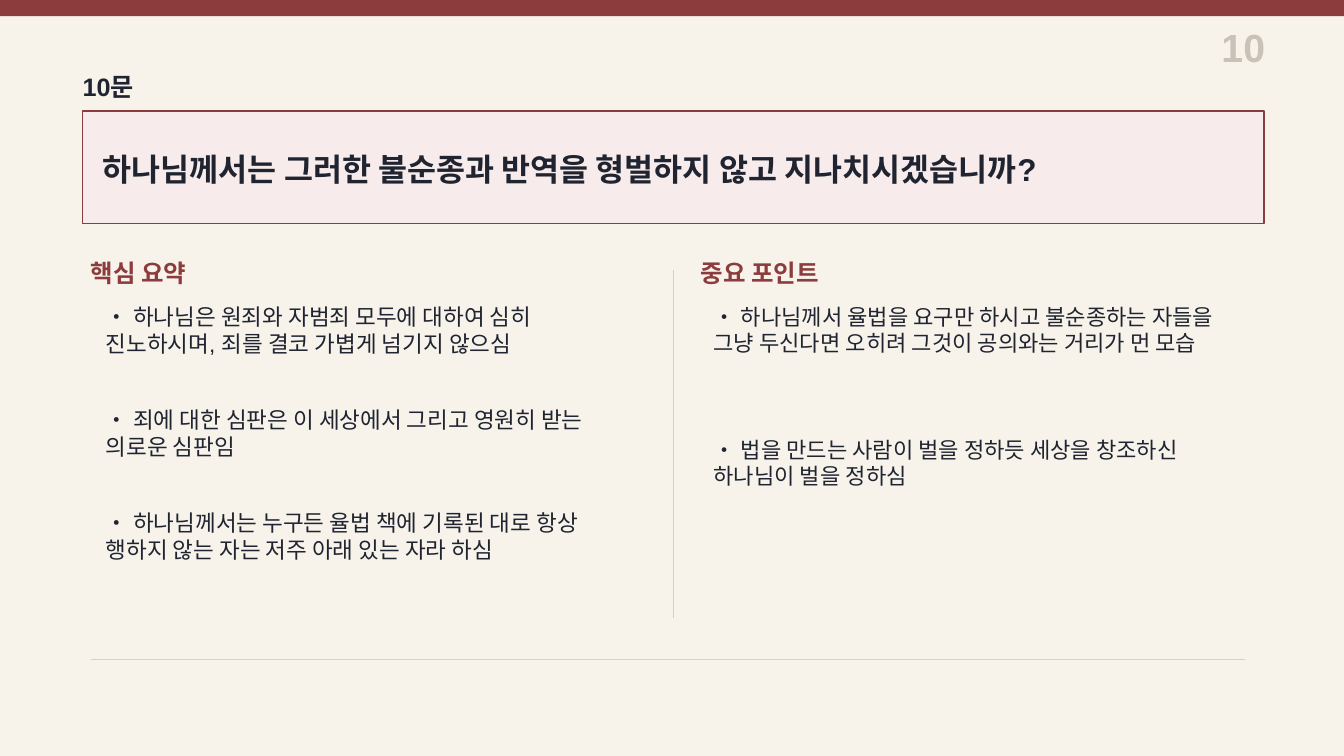
from pptx import Presentation
from pptx.dml.color import RGBColor
from pptx.enum.shapes import MSO_CONNECTOR, MSO_SHAPE
from pptx.enum.text import MSO_ANCHOR, PP_ALIGN
from pptx.oxml.ns import qn
from pptx.util import Pt
from lxml import etree

RECTANGLE = MSO_SHAPE.RECTANGLE
STRAIGHT = MSO_CONNECTOR.STRAIGHT
TOP, MIDDLE = MSO_ANCHOR.TOP, MSO_ANCHOR.MIDDLE
LEFT, RIGHT = PP_ALIGN.LEFT, PP_ALIGN.RIGHT

FONT = "Arial"
COLORS = {
    "paper": "F7F3EB",
    "wine": "8C3C3C",
    "blush": "F7ECEB",
    "ink": "1F2430",
    "number": "C9C2B7",
    "rule": "D8D0C2",
}


def color(name):
    return RGBColor.from_string(COLORS[name])


def add_text(page, text, frame, size, ink="ink", bold=True, align=LEFT, anchor=MIDDLE, inset=(0, 0)):
    box = page.shapes.add_textbox(*map(Pt, frame)).text_frame
    box.word_wrap = True
    box.vertical_anchor = anchor
    box.margin_left = box.margin_right = Pt(inset[0])
    box.margin_top = box.margin_bottom = Pt(inset[1])
    para = box.paragraphs[0]
    para.alignment = align
    span = para.add_run()
    span.text = text
    span.font.name = FONT
    span.font.size = Pt(size)
    span.font.bold = bold
    span.font.color.rgb = color(ink)


deck = Presentation()
deck.slide_width, deck.slide_height = Pt(960), Pt(540)
page = deck.slides.add_slide(deck.slide_layouts[6])
page.background.fill.solid()
page.background.fill.fore_color.rgb = color("paper")

panels = [
    ((0, 0, 960, 11.5), "wine", None),
    ((59, 79.2, 843.8, 80.6), "blush", "wine"),
]
for frame, fill, outline in panels:
    panel = page.shapes.add_shape(RECTANGLE, *map(Pt, frame))
    panel.shadow.inherit = False
    panel.fill.solid()
    panel.fill.fore_color.rgb = color(fill)
    if outline:
        panel.line.color.rgb = color(outline)
        panel.line.width = Pt(1.2)
    else:
        panel.line.fill.background()

add_text(page, "10", (831.6, 15.8, 72, 36), 28, "number", align=RIGHT)
add_text(page, "10문", (59, 51.8, 64.8, 20.2), 18)
add_text(page, "하나님께서는 그러한 불순종과 반역을 형벌하지 않고 지나치시겠습니까?",
         (73.4, 96.5, 812.2, 49), 22.5)

for ends in [(481, 193, 481, 441.4), (64.8, 470.9, 889.2, 470.9)]:
    rule = page.shapes.add_connector(STRAIGHT, *map(Pt, ends))
    rule.line.color.rgb = color("rule")
    rule.line.width = Pt(1)
    etree.SubElement(rule.element.spPr, qn("a:effectLst"))

columns = [
    ("핵심 요약", 64.8, 68.4, 60.5, 73.4, 16.1, [
        "• 하나님은 원죄와 자범죄 모두에 대하여 심히 진노하시며, 죄를 결코 가볍게 넘기지 않으심",
        "• 죄에 대한 심판은 이 세상에서 그리고 영원히 받는 의로운 심판임",
        "• 하나님께서는 누구든 율법 책에 기록된 대로 항상 행하지 않는 자는 저주 아래 있는 자라 하심",
    ]),
    ("중요 포인트", 500.4, 502.6, 80.6, 95, 15.8, [
        "• 하나님께서 율법을 요구만 하시고 불순종하는 자들을 그냥 두신다면 오히려 그것이 공의와는 거리가 먼 모습",
        "• 법을 만드는 사람이 벌을 정하듯 세상을 창조하신 하나님이 벌을 정하심",
    ]),
]
for heading, heading_left, left, height, step, size, points in columns:
    add_text(page, heading, (heading_left, 185.8, 216, 17.3), 17.5, "wine")
    for row, point in enumerate(points):
        add_text(page, point, (left, 213.1 + row * step, 387.4, height), size,
                 bold=False, anchor=TOP, inset=(7.2, 3.6))

deck.save("out.pptx")
